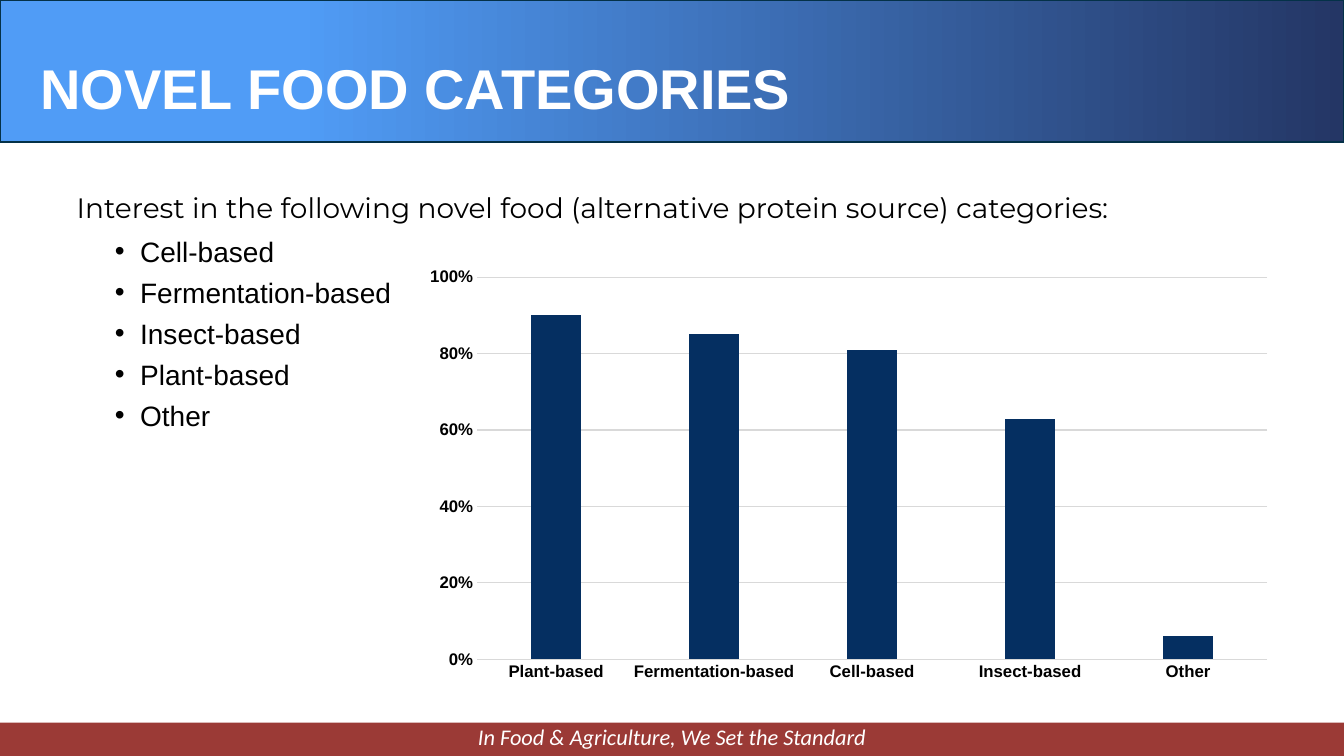
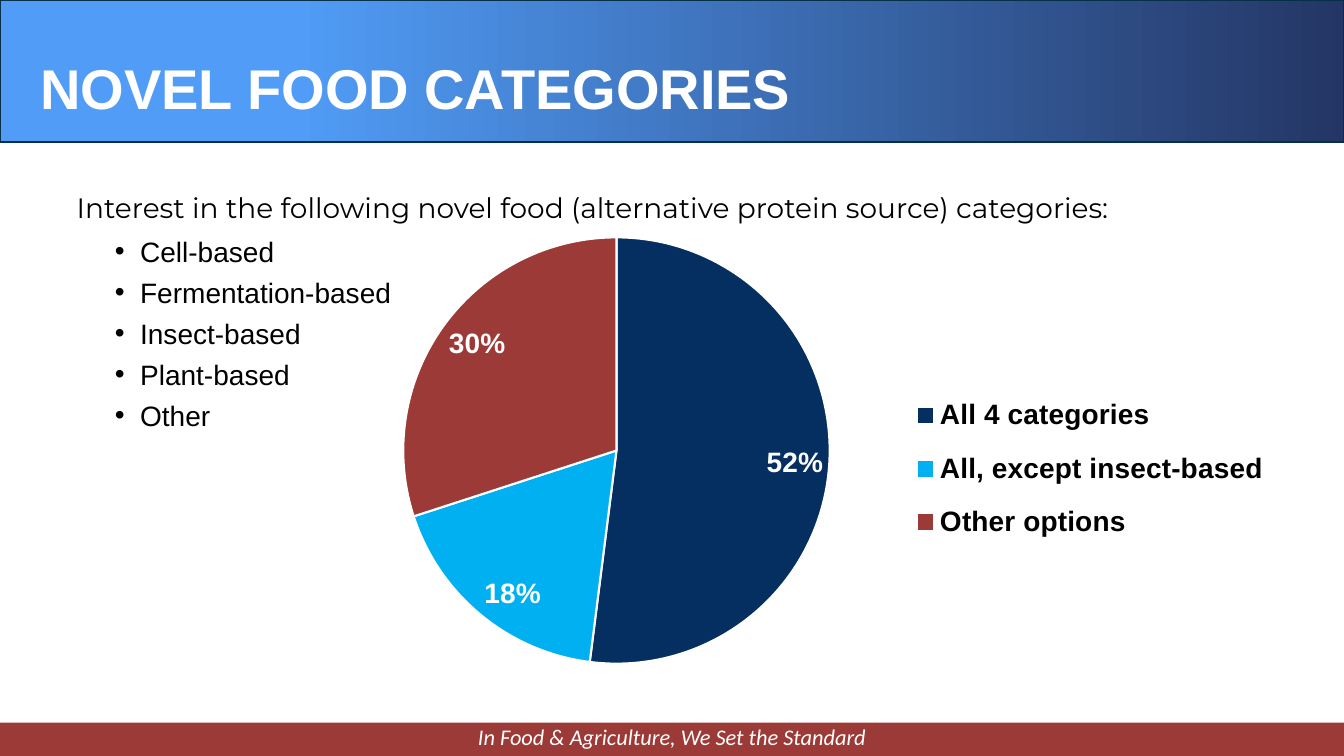
from pptx import Presentation
from pptx.chart.data import CategoryChartData
from pptx.dml.color import RGBColor
from pptx.enum.chart import (XL_CHART_TYPE as ChartType, XL_LABEL_POSITION as LabelPos,
                             XL_LEGEND_POSITION as LegendPos, XL_TICK_MARK as Tick)
from pptx.enum.shapes import MSO_SHAPE as Preset
from pptx.enum.text import MSO_ANCHOR as Anchor, MSO_AUTO_SIZE as AutoSize, PP_ALIGN as Align
from pptx.oxml import parse_xml
from pptx.oxml.ns import nsdecls
from pptx.oxml.xmlchemy import OxmlElement
from pptx.util import Inches, Pt

# Content
TITLE = "NOVEL FOOD CATEGORIES"
FOOTER = "In Food & Agriculture, We Set the Standard"
INTRO = "Interest in the following novel food (alternative protein source) categories:"
FOODS = ["Cell-based", "Fermentation-based", "Insect-based", "Plant-based", "Other"]
INTEREST = {"Plant-based": 0.9, "Fermentation-based": 0.85, "Cell-based": 0.81,
            "Insect-based": 0.63, "Other": 0.06}
COMBINATIONS = {"All 4 categories": 0.52, "All, except insect-based": 0.18,
                "Other options": 0.3}

# Colours and text formats
WHITE = RGBColor(0xFF, 0xFF, 0xFF)
BLACK = RGBColor(0x00, 0x00, 0x00)
NAVY = RGBColor(0x05, 0x2F, 0x61)
CYAN = RGBColor(0x00, 0xB0, 0xF0)
BRICK = RGBColor(0x9B, 0x3A, 0x36)
GRID = RGBColor(0xD9, 0xD9, 0xD9)
BAND_EDGE = RGBColor(0x04, 0x31, 0x48)
BAND_STOPS = [(0, RGBColor(0x24, 0x36, 0x65)), (0.78, RGBColor(0x50, 0x9C, 0xF6))]

TITLE_FONT = dict(name="Arial", size=Pt(40), bold=True, color=WHITE)
FOOTER_FONT = dict(name="Calibri", size=Pt(16), italic=True, color=WHITE)
INTRO_FONT = dict(name="Montserrat", size=Pt(20), color=BLACK)
LIST_FONT = dict(name="Arial", size=Pt(20), color=BLACK)
AXIS_FONT = dict(name="Arial", size=Pt(12), bold=True, color=BLACK)
LEGEND_FONT = dict(name="Arial", size=Pt(20), bold=True, color=BLACK)
LABEL_FONT = dict(LEGEND_FONT, color=WHITE)

WIDTH, HEIGHT = 13.33, 7.5


def set_font(font, formats):
    for key, value in formats.items():
        if key == "color":
            font.color.rgb = value
        else:
            setattr(font, key, value)


def place(shape, *box):
    for key, value in zip(("left", "top", "width", "height"), box):
        setattr(shape, key, Inches(value))


def add_band(page, top, height):
    band = page.shapes.add_shape(Preset.RECTANGLE, 0, Inches(top), Inches(WIDTH), Inches(height))
    band.shadow.inherit = False
    return band


def dress_layout(layout, page):
    """Draw the bands and footer once and move them to the layout."""
    footer_band = add_band(page, 7.17, 0.33)
    footer_band.fill.solid()
    footer_band.fill.fore_color.rgb = BRICK
    footer_band.line.fill.background()

    footer = page.shapes.add_textbox(0, Inches(7.13), Inches(WIDTH), Inches(0.37))
    footer.text_frame.word_wrap = True
    para = footer.text_frame.paragraphs[0]
    para.text, para.alignment = FOOTER, Align.CENTER
    set_font(para.runs[0].font, FOOTER_FONT)

    title_band = add_band(page, 0, 1.41)
    title_band.fill.gradient()
    title_band.fill.gradient_angle = 180
    for stop, (position, color) in zip(title_band.fill.gradient_stops, BAND_STOPS):
        stop.position, stop.color.rgb = position, color
    title_band.line.color.rgb = BAND_EDGE
    title_band.line.width = Pt(1.25)

    for number, shape in enumerate((footer_band, footer, title_band)):
        shape._element.nvSpPr.cNvPr.set("id", str(100 + number))
        layout.shapes._spTree.insert(2 + number, shape._element)
    place(layout.placeholders[0], 0.3, 0.2, 11.5, 1.33)


def fill_title(page):
    frame = page.shapes.title.text_frame
    frame.text = TITLE
    frame.auto_size, frame.vertical_anchor = AutoSize.NONE, Anchor.MIDDLE
    para = frame.paragraphs[0]
    para.alignment = Align.LEFT
    set_font(para.runs[0].font, TITLE_FONT)


def fill_list(page, width):
    body = page.placeholders[1]
    place(body, 0.66, 1.82, width, 2.45)
    frame = body.text_frame
    frame.text = "\n".join([INTRO] + FOODS)
    frame.auto_size, frame.vertical_anchor = AutoSize.NONE, Anchor.TOP
    for index, para in enumerate(frame.paragraphs):
        is_intro = index == 0
        properties = para._p.get_or_add_pPr()
        properties.set("marL", str(0 if is_intro else Inches(0.63)))
        properties.set("indent", str(0 if is_intro else Inches(-0.25)))
        if is_intro:
            properties.append(OxmlElement("a:buNone"))
        para.space_before = Pt(0)
        para.space_after = Pt(6 if is_intro else 4)
        para.line_spacing = 1.07 if is_intro else 1.05
        set_font(para.runs[0].font, INTRO_FONT if is_intro else LIST_FONT)


def layout_xml(inner, **fractions):
    target = '<c:layoutTarget val="inner"/>' if inner else ""
    modes = "".join(f'<c:{axis}Mode val="edge"/>' for axis in "xy")
    sizes = "".join(f'<c:{key} val="{value}"/>' for key, value in fractions.items())
    return parse_xml(f'<c:layout {nsdecls("c")}><c:manualLayout>{target}{modes}{sizes}'
                     '</c:manualLayout></c:layout>')


def add_chart(page, kind, values, box, plot_box):
    data = CategoryChartData(number_format="0%")
    data.categories = list(values)
    data.add_series("Series 1", list(values.values()))
    chart = page.shapes.add_chart(kind, *map(Inches, box), data).chart
    chart.has_title = chart.has_legend = False
    set_font(chart.font, AXIS_FONT)
    plot_area = chart._chartSpace.chart.plotArea
    for old in plot_area.findall("{*}layout"):
        plot_area.remove(old)
    plot_area.insert(0, layout_xml(True, **plot_box))
    return chart


def add_columns(page):
    chart = add_chart(page, ChartType.COLUMN_CLUSTERED, INTEREST, (4.13, 2.58, 8.61, 4.26),
                      dict(x=0.07, y=0.04, w=0.91, h=0.89))
    plot = chart.plots[0]
    plot.gap_width, plot.overlap, plot.vary_by_categories = 219, -27, False
    columns = plot.series[0].format.fill
    columns.solid()
    columns.fore_color.rgb = NAVY

    scale = chart.value_axis
    for key, value in dict(minimum_scale=0, maximum_scale=1, major_unit=0.2).items():
        setattr(scale, key, value)
    scale.tick_labels.number_format = "0%"
    scale.tick_labels.number_format_is_linked = False
    scale.format.line.fill.background()
    for axis in (scale, chart.category_axis):
        axis.major_tick_mark = axis.minor_tick_mark = Tick.NONE
        set_font(axis.tick_labels.font, AXIS_FONT)
    for line in (scale.major_gridlines.format.line, chart.category_axis.format.line):
        line.color.rgb, line.width = GRID, Pt(0.75)


def add_pie(page):
    chart = add_chart(page, ChartType.PIE, COMBINATIONS, (3.22, 2.22, 9.49, 4.5),
                      dict(x=0.08, y=0.03, w=0.45, h=0.94))
    plot = chart.plots[0]
    for index, color in enumerate((NAVY, CYAN, BRICK)):
        wedge = plot.series[0].points[index].format
        wedge.fill.solid()
        wedge.fill.fore_color.rgb = color
        wedge.line.color.rgb, wedge.line.width = WHITE, Pt(1.5)

    plot.has_data_labels = True
    labels = plot.data_labels
    for key, value in dict(show_value=True, show_percentage=False, number_format="0%",
                           number_format_is_linked=False,
                           position=LabelPos.INSIDE_END).items():
        setattr(labels, key, value)
    set_font(labels.font, LABEL_FONT)

    chart.has_legend = True
    legend = chart.legend
    legend.position, legend.include_in_layout = LegendPos.RIGHT, False
    set_font(legend.font, LEGEND_FONT)
    legend._element.insert(1, layout_xml(False, x=0.61, y=0.34, w=0.38, h=0.4))


def main():
    deck = Presentation()
    deck.slide_width, deck.slide_height = Inches(WIDTH), Inches(HEIGHT)
    layout = deck.slide_layouts[1]
    for index, (list_width, draw_chart) in enumerate([(12.07, add_columns), (11.81, add_pie)]):
        page = deck.slides.add_slide(layout)
        if index == 0:
            dress_layout(layout, page)
        fill_title(page)
        fill_list(page, list_width)
        draw_chart(page)
    deck.save("out.pptx")


if __name__ == "__main__":
    main()
